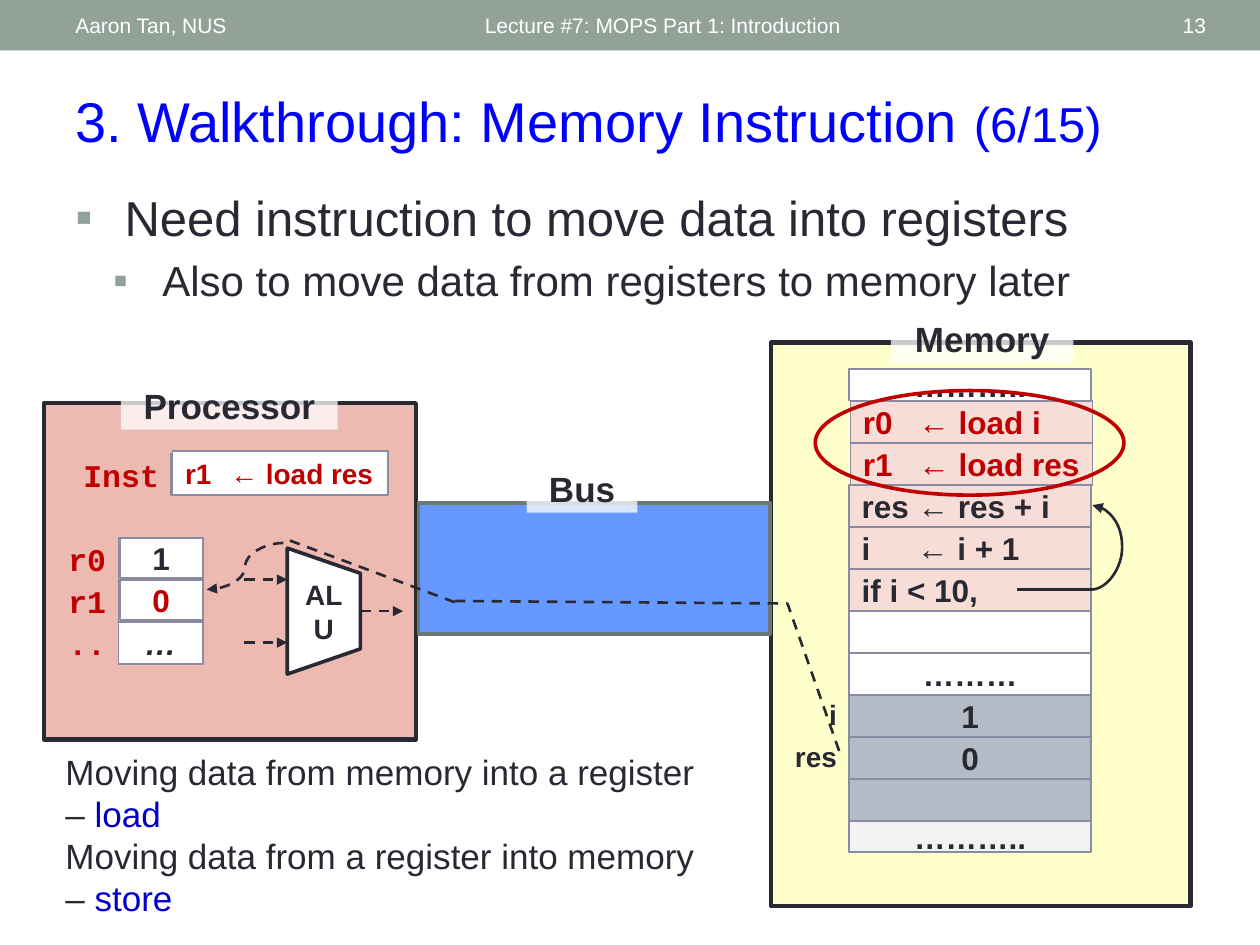
import pptx
import pptx.util
import pptx.dml.color
import pptx.enum.dml
import pptx.enum.shapes
import pptx.enum.text
import pptx.oxml
import pptx.oxml.ns
from lxml import etree

COLUMNS, ROWS = 10, 7.5          # the slide's grid; all places are (column, row)
CELL = pptx.util.Inches(1)
INK, WHITE, RED, BLUE = "292934", "FFFFFF", "C00000", "0000CC"
SAGE, EDGE, ROSE, STEEL = "93A299", "8A8AA3", "F6DDD8", "B3BBC6"
STEP = 1 / 3                     # height of a memory word or a register

SHAPE = pptx.enum.shapes.MSO_SHAPE
LINK = pptx.enum.shapes.MSO_CONNECTOR
ALIGN = pptx.enum.text.PP_ALIGN
ANCHOR = pptx.enum.text.MSO_ANCHOR
qn = pptx.oxml.ns.qn


def color(code):
    return pptx.dml.color.RGBColor.from_string(code)


def grid(*lengths):
    return [round(length * CELL) for length in lengths]


def add_span(para, text, size, code=INK, font="Arial", bold=False, italic=False):
    span = para.add_run()
    span.text = text
    span.font.size = pptx.util.Pt(size)
    span.font.name = font
    span.font.bold = bold
    span.font.italic = italic
    span.font.color.rgb = color(code)


def write(box, text, size, align=ALIGN.LEFT, anchor=ANCHOR.MIDDLE, **style):
    """Put one paragraph of one run into a box."""
    frame = box.text_frame
    frame.word_wrap = True
    frame.vertical_anchor = anchor
    para = frame.paragraphs[0]
    para.alignment = align
    add_span(para, text, size, **style)
    return para


def add_box(page, place, fill=None, line=None, width=1, kind=SHAPE.RECTANGLE):
    box = page.shapes.add_shape(kind, *grid(*place))
    box.shadow.inherit = False
    if fill:
        box.fill.solid()
        box.fill.fore_color.rgb = color(fill)
    else:
        box.fill.background()
    if line:
        box.line.color.rgb = color(line)
        box.line.width = pptx.util.Pt(width)
    else:
        box.line.fill.background()
    return box


def add_text(page, place, text, size, **style):
    return write(page.shapes.add_textbox(*grid(*place)), text, size, **style)


def add_tab(para, position):
    tabs = etree.SubElement(para._p.get_or_add_pPr(), qn("a:tabLst"))
    etree.SubElement(tabs, qn("a:tab"), pos=str(grid(position)[0]), algn="l")


def add_caption(page, place, text):
    """A bold heading on a see-through strip across a unit's top edge."""
    box = add_box(page, place, WHITE)
    solid = box._element.spPr.find(qn("a:solidFill"))
    etree.SubElement(solid[0], qn("a:alpha"), val="75000")
    frame = box.text_frame
    frame.margin_left = frame.margin_right = grid(0.07)[0]
    frame.margin_top = frame.margin_bottom = grid(0.03)[0]
    para = write(box, text, 20, ALIGN.CENTER, ANCHOR.TOP, bold=True)
    para.line_spacing = 0.85


def add_line(page, start, end, dash=True, arrow=False, kind=LINK.STRAIGHT, bend=None):
    line = page.shapes.add_connector(kind, *grid(*start, *end))
    line.line.color.rgb = color(INK)
    line.line.width = pptx.util.Pt(1.5)
    if dash:
        line.line.dash_style = pptx.enum.dml.MSO_LINE.DASH
    properties = line._element.spPr
    if arrow:
        etree.SubElement(properties.find(qn("a:ln")), qn("a:tailEnd"), type="triangle")
    if bend:
        guides = properties.find(qn("a:prstGeom")).find(qn("a:avLst"))
        etree.SubElement(guides, qn("a:gd"), name="adj1", fmla=f"val {bend * 100000}")
    etree.SubElement(properties, qn("a:effectLst"))
    return line


def add_bullet(para, text, size, level, left):
    para.level = level
    para.space_before = pptx.util.Pt(size * 0.2)
    add_span(para, text, size)
    properties = para._p.get_or_add_pPr()
    properties.set("marL", str(grid(left)[0]))
    properties.set("indent", str(grid(-0.39)[0]))
    tint = etree.SubElement(properties, qn("a:buClr"))
    etree.SubElement(tint, qn("a:srgbClr"), val=SAGE)
    etree.SubElement(properties, qn("a:buFont"), typeface="Arial")
    etree.SubElement(properties, qn("a:buChar"), char="▪")


def add_header(page):
    add_box(page, (0, 0, COLUMNS, 0.4), SAGE)
    for left, width, text, align in (
            (3.75, 4.5, "Lecture #7: MOPS Part 1: Introduction", ALIGN.LEFT),
            (0.5, 3.17, "Aaron Tan, NUS", ALIGN.LEFT),
            (8.72, 0.95, "13", ALIGN.RIGHT)):
        add_text(page, (left, 0.02, width, 0.36), text, 12, align=align, code=WHITE)
    title = add_text(page, (0.5, 0.64, 9.17, 0.64), "3. Walkthrough: Memory Instruction ",
                     32, anchor=ANCHOR.TOP, code="0000FF")
    add_span(title, "(6/15)", 28, "0000FF")


def add_points(page):
    frame = page.shapes.add_textbox(*grid(0.5, 1.44, 9, 1.58)).text_frame
    frame.word_wrap = True
    add_bullet(frame.paragraphs[0], "Need instruction to move data into registers", 28, 0, 0.39)
    add_bullet(frame.add_paragraph(), "Also to move data from registers to memory later",
               24, 1, 0.69)


def add_units(page):
    add_box(page, (0.35, 3.2, 2.95, 2.67), "EDBAB1", INK, 2.5)
    add_caption(page, (0.96, 3.07, 1.72, 0.34), "Processor")
    add_box(page, (6.12, 2.72, 3.33, 4.47), "FFFFCC", INK, 2.5)
    add_caption(page, (7.07, 2.54, 1.45, 0.34), "Memory")
    add_box(page, (3.32, 3.99, 2.79, 1.04), "6699FF", "6D7871", 2.08)
    add_caption(page, (4.18, 3.73, 0.88, 0.34), "Bus")


def add_memory(page):
    left, center = ALIGN.LEFT, ALIGN.CENTER
    words = (("………..", WHITE, center, INK),
             ("r0\t← load i", ROSE, left, RED), ("r1\t← load res", ROSE, left, RED),
             ("res ← res + i", ROSE, left, INK), ("i\t← i + 1", ROSE, left, INK),
             ("if i < 10,", ROSE, left, INK), ("", WHITE, left, INK),
             ("………", WHITE, center, INK), ("1", STEEL, center, INK),
             ("0", STEEL, center, INK), ("", STEEL, left, INK),
             ("………..", "F2F2F2", center, INK))
    top, cells = 2.93, []
    for index, (text, fill, align, code) in enumerate(words):
        height = 0.25 if index in (0, len(words) - 1) else STEP
        indent = 0.01 if code == RED else 0
        cell = add_box(page, (6.74 + indent, top, 1.92, height), fill, EDGE)
        if text:
            para = write(cell, text, 18, align, code=code, bold=True)
            if "\t" in text:
                add_tab(para, 0.44)
        cells.append(cell)
        top += height
    for row, name in enumerate(("i", "res")):
        add_text(page, (6.16, 5.5 + row * STEP, 0.58, STEP), name, 16,
                 align=ALIGN.RIGHT, bold=True)
    # Loop back from the test to the addition
    add_line(page, (8.66, 4.68), (8.67, 4.01), False, True, LINK.CURVE, bend=25)
    add_line(page, (8.07, 4.68), (8.66, 4.68), False).end_connect(cells[5], 3)
    add_box(page, (6.47, 3.1, 2.45, 0.83), None, RED, 2.08, SHAPE.OVAL)


def add_processor(page):
    label = dict(align=ALIGN.RIGHT, font="Courier New", code=RED, bold=True)
    # Current instruction
    add_text(page, (0.53, 3.6, 0.83, STEP), "Inst", 18, **label)
    add_box(page, (1.36, 3.6, 1.5, STEP), WHITE, EDGE)
    box = add_box(page, (1.37, 3.58, 1.71, 0.35), WHITE, EDGE)
    add_tab(write(box, "r1\t← load res", 16, code=RED, bold=True), 0.36)
    # Arithmetic unit with its inputs and output
    unit = add_box(page, (2.07, 4.56, 1, 0.58), WHITE, INK, 2.08,
                   SHAPE.FLOWCHART_MANUAL_OPERATION)
    unit.rotation = 270
    write(unit, "ALU", 16, ALIGN.CENTER, bold=True)
    unit.text_frame._txBody.bodyPr.set("vert", "vert")
    for start, row in ((1.94, 4.6), (1.94, 5.1), (2.86, 4.85)):
        add_line(page, (start, row), (start + 0.34, row), arrow=True)
    # Path of the loaded value, from memory to register
    add_line(page, (6.66, 5.96), (6.25, 4.79))
    add_line(page, (3.61, 4.77), (6.25, 4.79))
    add_line(page, (3.61, 4.78), (2.3, 4.29))
    add_line(page, (2.25, 4.31), (1.64, 4.68), arrow=True, kind=LINK.CURVE)
    # Registers
    for row, (name, value, code) in enumerate((("r0", "1", INK), ("r1", "0", RED),
                                               ("..", "…", INK))):
        top = 4.27 + row * STEP
        add_text(page, (0.44, top, 0.5, STEP), name, 18, **label)
        cell = add_box(page, (0.94, top, 0.67, STEP), WHITE, EDGE)
        if name != "..":
            cell = add_box(page, (0.95, top, 0.66, 0.32), WHITE, EDGE)
        write(cell, value, 18, ALIGN.CENTER, code=code, bold=True, italic=name == "..")


def add_summary(page):
    frame = page.shapes.add_textbox(*grid(0.42, 5.91, 5.39, 1.45)).text_frame
    frame.word_wrap = True
    for para, text, verb in (
            (frame.paragraphs[0], "Moving data from memory into a register – ", "load"),
            (frame.add_paragraph(), "Moving data from a register into memory – ", "store")):
        add_span(para, text, 20)
        add_span(para, verb, 20, BLUE)


def main():
    deck = pptx.Presentation()
    deck.slide_width, deck.slide_height = grid(COLUMNS, ROWS)
    page = deck.slides.add_slide(deck.slide_layouts[6])
    for part in (add_header, add_points, add_units, add_memory, add_processor, add_summary):
        part(page)
    deck.save("out.pptx")


if __name__ == "__main__":
    main()
